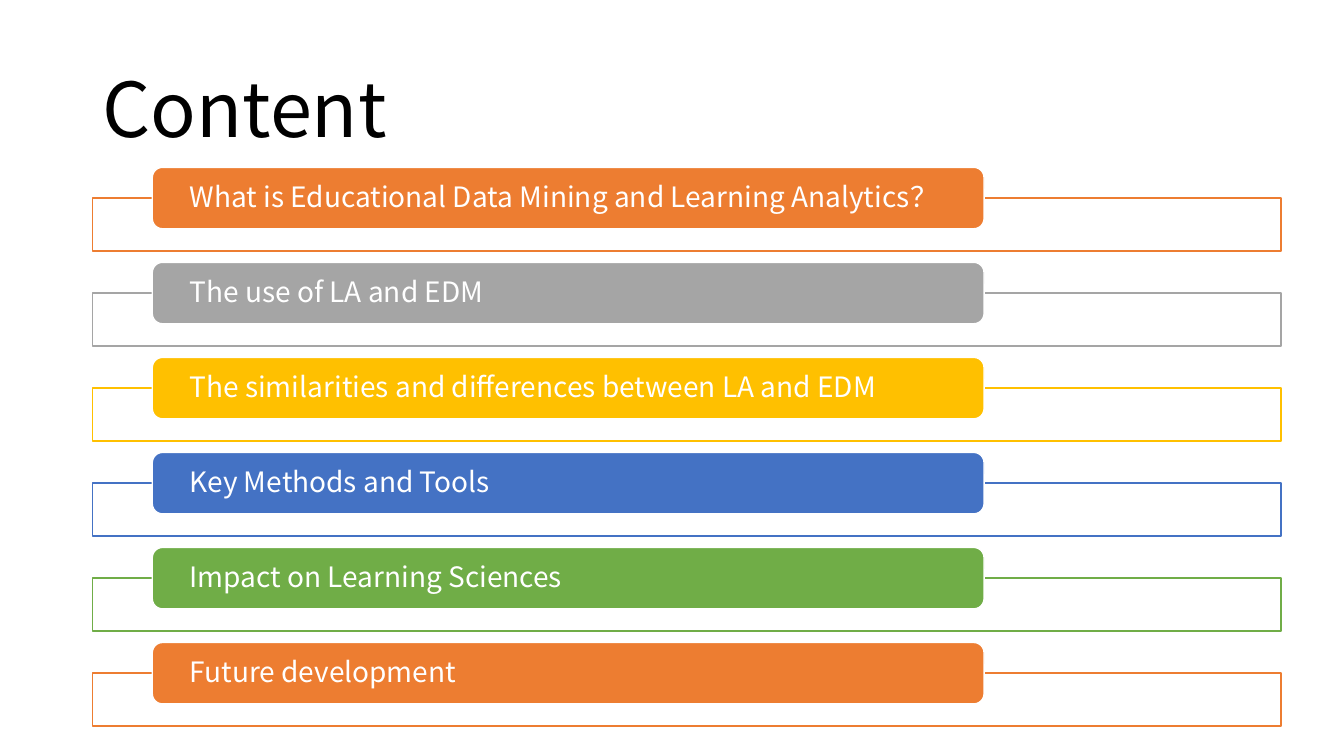
from lxml.etree import SubElement
from pptx import Presentation
from pptx.dml.color import RGBColor
from pptx.enum.shapes import MSO_SHAPE
from pptx.enum.text import MSO_ANCHOR, PP_ALIGN
from pptx.oxml.ns import qn
from pptx.util import Inches, Pt

BLACK = RGBColor(0x00, 0x00, 0x00)
WHITE = RGBColor(0xFF, 0xFF, 0xFF)
ORANGE = RGBColor(0xED, 0x7D, 0x31)
GRAY = RGBColor(0xA5, 0xA5, 0xA5)
GOLD = RGBColor(0xFF, 0xC0, 0x00)
BLUE = RGBColor(0x44, 0x72, 0xC4)
GREEN = RGBColor(0x70, 0xAD, 0x47)

TOPICS = [
    ("What is Educational Data Mining and Learning Analytics？", ORANGE),
    ("The use of LA and EDM", GRAY),
    ("The similarities and differences between LA and EDM", GOLD),
    ("Key Methods and Tools", BLUE),
    ("Impact on Learning Sciences", GREEN),
    ("Future development", ORANGE),
]

# Shares of the slide's size, in percent
LEFT = 6.88
FIRST = 22.13
PITCH = 12.57


class Deck:
    font = "Noto Sans CJK SC"

    def __init__(self):
        self.show = Presentation()
        self.show.slide_width = Inches(13.33)
        self.show.slide_height = Inches(7.5)
        self.slide = self.show.slides.add_slide(self.show.slide_layouts[5])

    def area(self, x, y, w, h):
        """Turn percentages of the slide's size into lengths."""
        wide, high = self.show.slide_width, self.show.slide_height
        return [int(share * side / 100)
                for share, side in zip((x, y, w, h), (wide, high) * 2)]

    def label(self, shape, text, size, color):
        frame = shape.text_frame
        frame.word_wrap = True
        frame.vertical_anchor = MSO_ANCHOR.MIDDLE
        para = frame.paragraphs[0]
        para.alignment = PP_ALIGN.LEFT
        para.line_spacing = 0.9
        run = para.add_run()
        run.text = text
        run.font.size = Pt(size)
        run.font.color.rgb = color
        run.font.name = self.font
        asian = SubElement(run._r.get_or_add_rPr(), qn("a:ea"))
        asian.set("typeface", self.font)

    def title(self, text, *box):
        shape = self.slide.shapes.title
        shape.left, shape.top, shape.width, shape.height = self.area(*box)
        self.label(shape, text, 54, BLACK)

    def block(self, kind, fill, line, *box):
        shape = self.slide.shapes.add_shape(kind, *self.area(*box))
        shape.shadow.inherit = False
        shape.fill.solid()
        shape.fill.fore_color.rgb = fill
        shape.line.color.rgb = line
        shape.line.width = Pt(1)
        return shape

    def frame(self, color, *box):
        shape = self.block(MSO_SHAPE.RECTANGLE, WHITE, color, *box)
        tint = shape._element.spPr.find(qn("a:solidFill")).find(qn("a:srgbClr"))
        SubElement(tint, qn("a:alpha")).set("val", "90000")

    def bar(self, text, color, *box):
        shape = self.block(MSO_SHAPE.ROUNDED_RECTANGLE, color, WHITE, *box)
        body = shape.text_frame
        body.margin_left = body.margin_right = Inches(0.34)
        body.margin_top = body.margin_bottom = 0
        self.label(shape, text, 20, WHITE)


def main():
    deck = Deck()
    deck.title("Content", LEFT, 5.33, 86.25, 19.33)
    for row, (text, color) in enumerate(TOPICS):
        top = FIRST + row * PITCH
        deck.frame(color, LEFT, top + 4.07, 88.45, 6.99)
        deck.bar(text, color, 11.33, top, 61.89, 8.13)
    deck.show.save("out.pptx")


if __name__ == "__main__":
    main()
